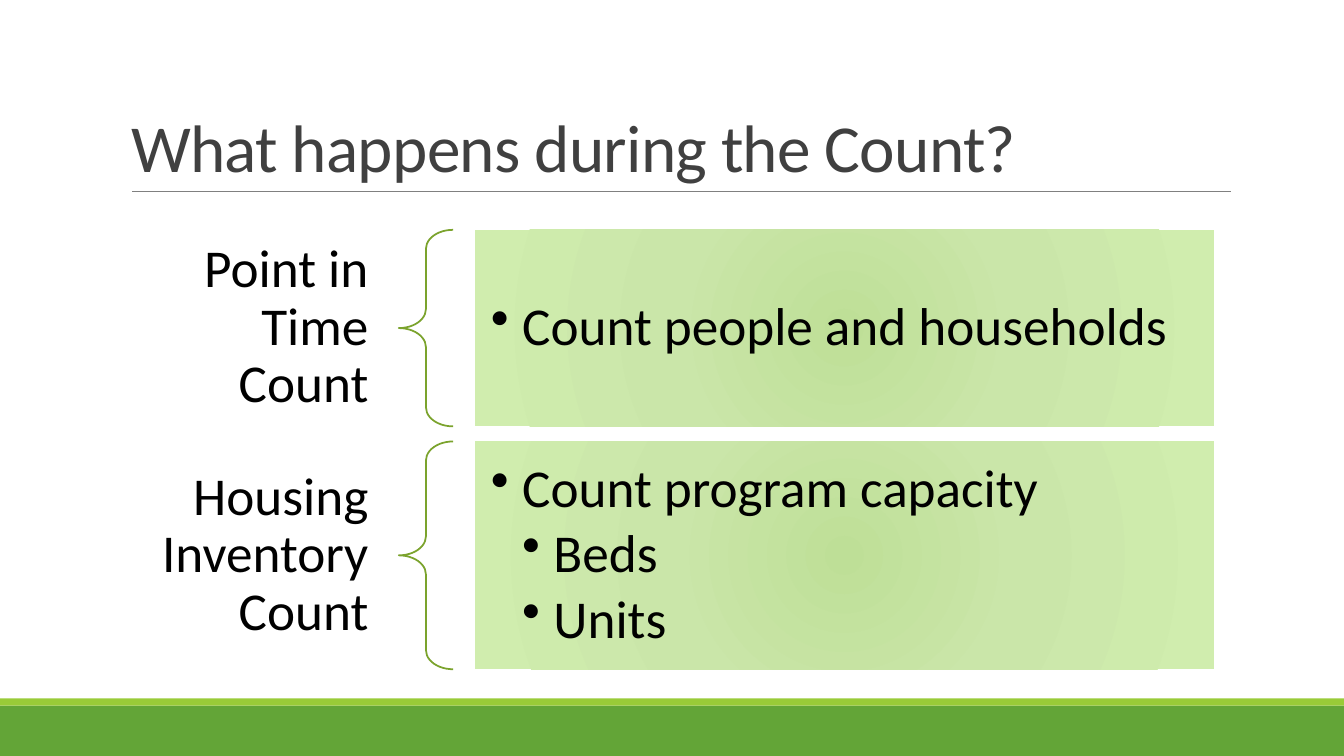
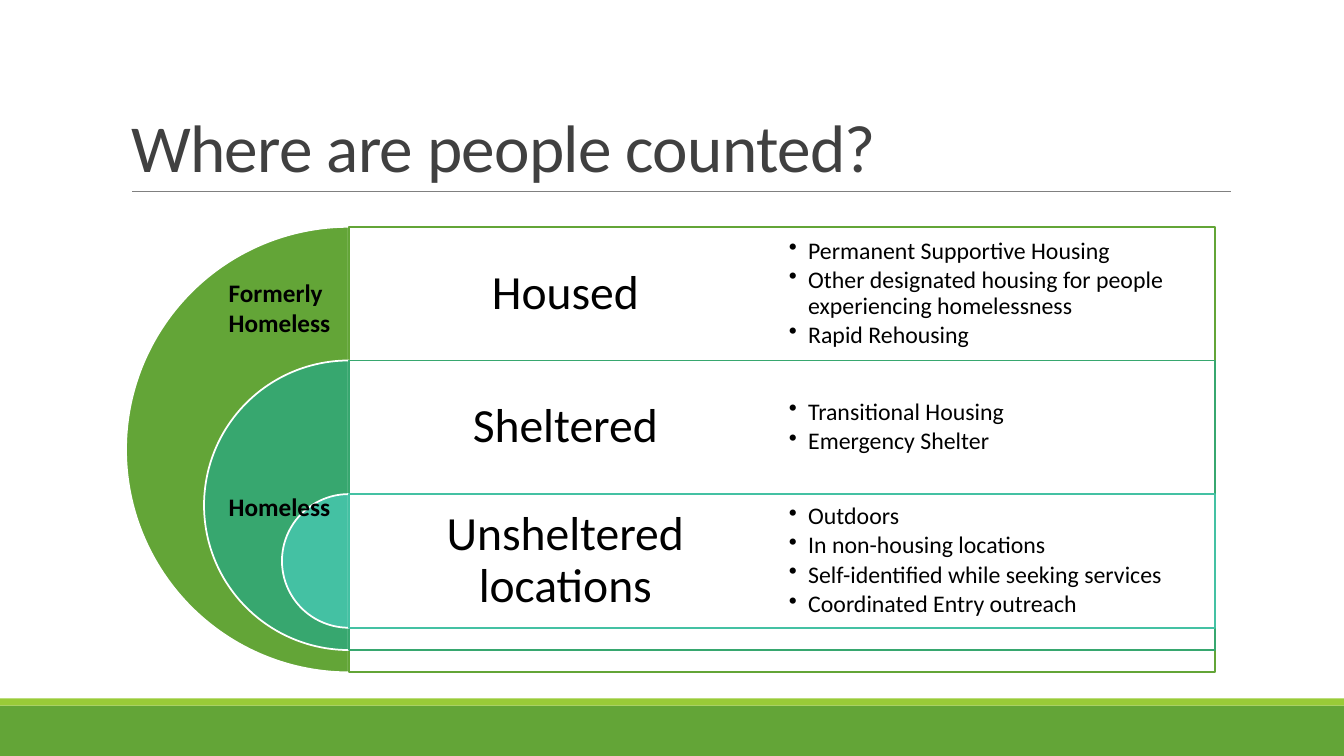
from pptx import Presentation
from pptx import util as u
from pptx.dml.color import RGBColor
from pptx.enum import shapes, text
from pptx.oxml import parse_xml
from pptx.oxml.ns import nsdecls, qn

WIDTH, HEIGHT = 13.33, 7.5
FONT = "Calibri"
BLACK = RGBColor(0x00, 0x00, 0x00)
WHITE = RGBColor(0xFF, 0xFF, 0xFF)
TITLE_GREY = RGBColor(0x40, 0x40, 0x40)
RULE_GREY = RGBColor(0x80, 0x80, 0x80)
GREEN = RGBColor(0x63, 0xA5, 0x37)
LIME = RGBColor(0x99, 0xCB, 0x38)
JADE = RGBColor(0x37, 0xA7, 0x6F)
TEAL = RGBColor(0x44, 0xC1, 0xA3)
BRACE_GREEN = RGBColor(0x7B, 0xA3, 0x2D)
PANEL_STOPS = [
    (0, RGBColor(0xBE, 0xDF, 0x97)),
    (45, RGBColor(0xCA, 0xE6, 0xA9)),
    (100, RGBColor(0xD0, 0xED, 0xAE)),
]

TITLE_BOX = (1.2, 0.31, 11, 1.59)
RULE = (1.31, 12.21, 1.9)
BANDS = [(7, 0.5, GREEN), (6.93, 0.07, LIME)]

COUNT_BOX = (1.26, 2.28, 10.78, 4.36)
COUNT_ROWS = [
    ("Point in Time Count", 1.95, [(0, "Count people and households")]),
    ("Housing Inventory Count", 2.26,
     [(0, "Count program capacity"), (1, "Beds"), (1, "Units")]),
]

PLACES_BOX = (1.25, 2.25, 10.8, 4.42)
PLACES = [
    ("Housed", GREEN,
     ["Permanent Supportive Housing",
      "Other designated housing for people experiencing homelessness",
      "Rapid Rehousing"]),
    ("Sheltered", JADE, ["Transitional Housing", "Emergency Shelter"]),
    ("Unsheltered locations", TEAL,
     ["Outdoors", "In non-housing locations",
      "Self-identified while seeking services", "Coordinated Entry outreach"]),
]
PIE_LABELS = [("Homeless", 4.83, 0.4), ("Formerly Homeless", 2.7, 0.71)]


def inches(*lengths):
    return [u.Inches(n) for n in lengths]


def apply(target, **values):
    for name, value in values.items():
        setattr(target, name, value)


def add_shape(slide, kind, box, fill=None, line=None):
    sp = slide.shapes.add_shape(kind, *inches(*box))
    sp.shadow.inherit = False
    if fill is None:
        sp.fill.background()
    else:
        sp.fill.solid()
        sp.fill.fore_color.rgb = fill
    if line is None:
        sp.line.fill.background()
    else:
        sp.line.color.rgb = line
        sp.line.width = u.Pt(1.25)
    return sp


def add_text(slide, box, items, size, inset=(0.1, 0.05), bullet=None,
             anchor=text.MSO_ANCHOR.MIDDLE, align=text.PP_ALIGN.LEFT,
             spacing=0.9, bold=False):
    """Place (level, wording) items; bullet is the indent of one level."""
    tf = slide.shapes.add_textbox(*inches(*box)).text_frame
    side, end = inches(*inset)
    apply(tf, word_wrap=True, vertical_anchor=anchor, margin_left=side,
          margin_right=side, margin_top=end, margin_bottom=end)
    for i, (level, wording) in enumerate(items):
        p = tf.add_paragraph() if i else tf.paragraphs[0]
        apply(p, alignment=align, line_spacing=spacing)
        if bullet:
            p.level = level
            p.space_after = u.Pt(0.15 * size)
            pPr = p._p.get_or_add_pPr()
            pPr.set("marL", str(u.Inches(bullet * (level + 1))))
            pPr.set("indent", str(-u.Inches(bullet)))
            pPr.append(parse_xml(f'<a:buChar {nsdecls("a")} char="•"/>'))
        r = p.add_run()
        r.text = wording
        apply(r.font, name=FONT, size=u.Pt(size), bold=bold)
        r.font.color.rgb = BLACK


def fill_radial(sp, stops):
    marks = "".join(
        f'<a:gs pos="{pos * 1000}"><a:srgbClr val="{color}"/></a:gs>'
        for pos, color in stops)
    gradient = parse_xml(
        f'<a:gradFill {nsdecls("a")} rotWithShape="1"><a:gsLst>{marks}</a:gsLst>'
        '<a:path path="circle"><a:fillToRect l="100000" t="100000" '
        'r="100000" b="100000"/></a:path></a:gradFill>')
    spPr = sp.element.spPr
    spPr.replace(spPr.find(qn("a:noFill")), gradient)


def set_opacity(sp, percent):
    color = sp.element.spPr.find(qn("a:solidFill"))[0]
    color.append(parse_xml(f'<a:alpha {nsdecls("a")} val="{percent * 1000}"/>'))


def decorate_layout(slide):
    """Draw the bands and title rule, then move them to the slide's layout."""
    parts = [add_shape(slide, shapes.MSO_SHAPE.RECTANGLE, (0, top, WIDTH, height), color)
             for top, height, color in BANDS]
    left, right, y = RULE
    rule = slide.shapes.add_connector(
        shapes.MSO_CONNECTOR.STRAIGHT, *inches(left, y, right, y))
    rule.line.color.rgb = RULE_GREY
    rule.line.width = u.Pt(0.5)
    rule.element.spPr.append(parse_xml(f'<a:effectLst {nsdecls("a")}/>'))
    tree = slide.slide_layout.element.cSld.spTree
    for part in parts + [rule]:
        tree.append(part.element)


def add_titled_slide(prs, wording):
    slide = prs.slides.add_slide(prs.slide_layouts[5])
    title = slide.shapes.title
    apply(title, **dict(zip(("left", "top", "width", "height"), inches(*TITLE_BOX))))
    tf = title.text_frame
    apply(tf, word_wrap=True, auto_size=text.MSO_AUTO_SIZE.NONE,
          vertical_anchor=text.MSO_ANCHOR.BOTTOM)
    p = tf.paragraphs[0]
    apply(p, alignment=text.PP_ALIGN.LEFT, line_spacing=0.85)
    r = p.add_run()
    r.text = wording
    apply(r.font, name=FONT, size=u.Pt(48))
    r.font.color.rgb = TITLE_GREY
    r._r.get_or_add_rPr().set("spc", "-50")
    return slide


def add_brace_list(slide, box, rows):
    """Stack rows of label, brace and bulleted panel, spread over the box."""
    left, top, width, height = box
    gap = (height - sum(row[1] for row in rows)) / (len(rows) - 1)
    label_w, brace_w, panel_w = (share * width for share in (0.25, 0.05, 0.68))
    panel_x = left + width - panel_w
    for label, row_h, items in rows:
        add_text(slide, (left, top, label_w, row_h), [(0, label)], 38,
                 inset=(0.3, 0.11), align=text.PP_ALIGN.RIGHT)
        brace = add_shape(slide, shapes.MSO_SHAPE.LEFT_BRACE,
                          (left + label_w, top, brace_w, row_h), line=BRACE_GREEN)
        brace.adjustments[0] = 0.35
        panel_box = (panel_x, top, panel_w, row_h)
        panel = add_shape(slide, shapes.MSO_SHAPE.RECTANGLE, panel_box)
        fill_radial(panel, PANEL_STOPS)
        add_text(slide, panel_box, items, 38, inset=(0.16, 0.16), bullet=0.31)
        top += row_h + gap


def add_nested_targets(slide, box, places):
    """Nest half discs, each opening to a sheet with a heading and a list."""
    left, top, width, height = box
    center = left + height / 2
    sheet_w = left + width - center
    row_h, column_w = 0.3 * height, sheet_w / 2
    for i, (heading, color, items) in enumerate(places):
        y = top + i * row_h
        size = height * (1 - 0.35 * i)
        pie = add_shape(slide, shapes.MSO_SHAPE.PIE,
                        (center - size / 2, y, size, size), color, WHITE)
        pie.adjustments[0], pie.adjustments[1] = 54, 162
        sheet = add_shape(slide, shapes.MSO_SHAPE.RECTANGLE,
                          (center, y, sheet_w, size), WHITE, color)
        set_opacity(sheet, 90)
        add_text(slide, (center, y, column_w, row_h), [(0, heading)], 34,
                 inset=(0.14, 0.14), align=text.PP_ALIGN.CENTER)
        add_text(slide, (center + column_w, y, column_w, row_h),
                 [(0, item) for item in items], 17, inset=(0.07, 0.07), bullet=0.19)


def main():
    prs = Presentation()
    prs.slide_width, prs.slide_height = inches(WIDTH, HEIGHT)

    slide = add_titled_slide(prs, "What happens during the Count?")
    decorate_layout(slide)
    add_brace_list(slide, COUNT_BOX, COUNT_ROWS)

    slide = add_titled_slide(prs, "Where are people counted?")
    add_nested_targets(slide, PLACES_BOX, PLACES)
    for wording, top, height in PIE_LABELS:
        add_text(slide, (2.17, top, 1.3, height), [(0, wording)], 18,
                 anchor=text.MSO_ANCHOR.TOP, spacing=1.0, bold=True)

    prs.save("out.pptx")


if __name__ == "__main__":
    main()
